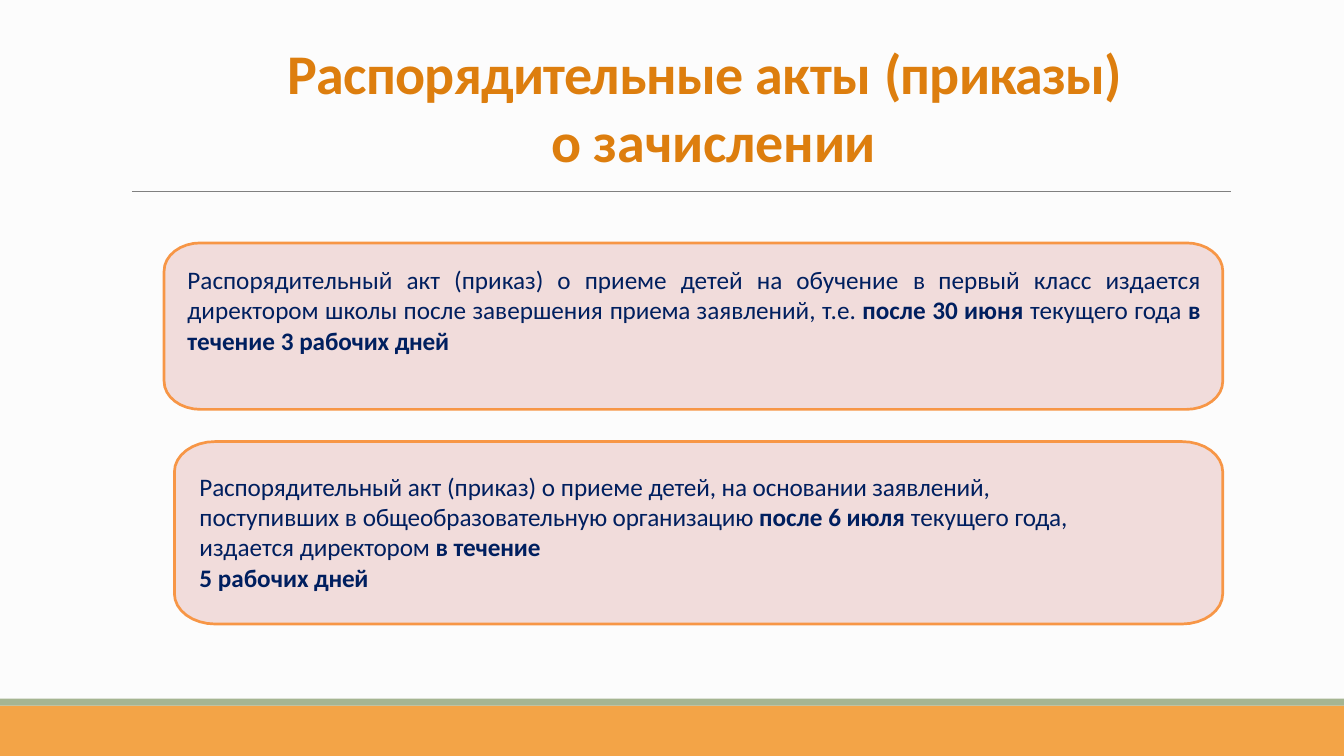
import math
import pptx
import pptx.util
import pptx.dml.color
import pptx.enum.shapes
import pptx.enum.text
import pptx.oxml

Pt = pptx.util.Pt
RGB = pptx.dml.color.RGBColor
Align = pptx.enum.text.PP_ALIGN
Anchor = pptx.enum.text.MSO_ANCHOR

PAPER = RGB(0xFC, 0xFC, 0xFC)
AMBER = RGB(0xF3, 0xA4, 0x47)
SAGE = RGB(0xA5, 0xB5, 0x92)
GRAY = RGB(0x80, 0x80, 0x80)
RUST = RGB(0xDD, 0x7E, 0x0E)
PINK = RGB(0xF1, 0xDC, 0xDB)
EDGE = RGB(0xF7, 0x96, 0x46)
NAVY = RGB(0x00, 0x1F, 0x5F)


class Board:
    """Holds the style and the current slide."""
    face = "Calibri"

    def __init__(self, slide):
        self.slide = slide
        slide.background.fill.solid()
        slide.background.fill.fore_color.rgb = PAPER

    def paint(self, shape, fill, edge=None, width=0):
        shape.shadow.inherit = False
        shape.fill.solid()
        shape.fill.fore_color.rgb = fill
        if edge is None:
            shape.line.fill.background()
        else:
            shape.line.color.rgb = edge
            shape.line.width = Pt(width)

    def band(self, left, top, width, height, fill):
        kind = pptx.enum.shapes.MSO_SHAPE.RECTANGLE
        shape = self.slide.shapes.add_shape(
            kind, Pt(left), Pt(top), Pt(width), Pt(height))
        self.paint(shape, fill)

    def rule(self, left, right, top):
        kind = pptx.enum.shapes.MSO_CONNECTOR.STRAIGHT
        line = self.slide.shapes.add_connector(
            kind, Pt(left), Pt(top), Pt(right), Pt(top))
        line.line.color.rgb = GRAY
        line.line.width = Pt(0.5)
        props = line.element.spPr
        props.append(pptx.oxml.parse_xml(
            '<a:effectLst xmlns:a='
            '"http://schemas.openxmlformats.org/drawingml/2006/main"/>'))

    def panel(self, left, top, right, low, rx, ry):
        """Box with elliptical corners, traced clockwise from the left."""
        hubs = [(left + rx, top + ry), (right - rx, top + ry),
                (right - rx, low - ry), (left + rx, low - ry)]
        dots = []
        for turn, (x, y) in enumerate(hubs):
            for step in range(9):
                arc = math.pi * (1 + turn / 2 + step / 16)
                dots.append((Pt(x + rx * math.cos(arc)),
                             Pt(y + ry * math.sin(arc))))
        form = self.slide.shapes.build_freeform(*dots[0], scale=1.0)
        form.add_line_segments(dots[1:], close=True)
        self.paint(form.convert_to_shape(), PINK, EDGE, 1.92)

    def text(self, left, top, width, height, paras, size, color, align,
             inset=1, before=(1,), indent=(0.7, 0), bold=False,
             anchor=Anchor.TOP):
        """Each run is (text, letter spacing, bold); "\\v" breaks a line."""
        box = self.slide.shapes.add_textbox(
            Pt(left), Pt(top), Pt(width), Pt(height))
        frame = box.text_frame
        frame.word_wrap = True
        frame.auto_size = pptx.enum.text.MSO_AUTO_SIZE.SHAPE_TO_FIT_TEXT
        frame.vertical_anchor = anchor
        frame.margin_left = frame.margin_right = frame.margin_bottom = 0
        frame.margin_top = Pt(inset)
        for num, (runs, gap) in enumerate(zip(paras, before)):
            para = frame.add_paragraph() if num else frame.paragraphs[0]
            para.alignment = align
            para.space_before = Pt(gap)
            props = para._p.get_or_add_pPr()
            props.set("marL", str(Pt(indent[0])))
            props.set("indent", str(Pt(indent[1])))
            font = para.font
            font.name, font.size, font.bold = self.face, Pt(size), bold
            font.color.rgb = color
            for words, track, heavy in runs:
                if words == "\v":
                    para.add_line_break()
                    continue
                run = para.add_run()
                run.text = words
                run.font.name, run.font.size = self.face, Pt(size)
                run.font.bold = heavy
                run.font.color.rgb = color
                run._r.get_or_add_rPr().set("spc", str(round(track * 100)))


def main():
    deck = pptx.Presentation()
    deck.slide_width, deck.slide_height = Pt(960), Pt(540)
    board = Board(deck.slides.add_slide(deck.slide_layouts[6]))

    # Footer bands and the rule under the title
    board.band(0, 504, 960, 36, AMBER)
    board.band(0, 499, 960, 5, SAGE)
    board.rule(94.3, 879.1, 136.6)

    # Title
    title = [("Распорядительные ", -0.5, True), ("акты ", -0.2, True),
             ("(приказы) ", -0.5, True), ("\v", 0, True),
             ("о ", -0.5, True), ("зачислении", -0.1, True)]
    board.text(86.4, 22.3, 792, 101.5, [title], 40, RUST, Align.CENTER,
               inset=5, before=(1.1,), indent=(55.4, -4.3), bold=True,
               anchor=Anchor.BOTTOM)

    # First grade orders
    board.panel(117.2, 173.5, 873.4, 292.4, 26, 20)
    first = [("Распорядительный акт (приказ) о приеме детей на обучение ",
              0, False),
             ("в ", -0.5, False),
             ("первый класс издается директором школы после завершения ",
              0, False),
             ("приема ", -0.1, False), ("заявлений, т.е. ", 0, False),
             ("после 30 июня ", 0, True), ("текущего года ", 0, False),
             ("в течение 3 ", 0, True), ("рабочих ", -0.1, True),
             ("дней", -0.2, True)]
    board.text(133.2, 187.9, 724.3, 66.2, [first], 18, NAVY, Align.JUSTIFY)

    # Orders on later applications
    board.panel(124.6, 315.4, 873.4, 445.7, 29, 21.6)
    later = [("Распорядительный ", -0.1, False),
             ("акт (приказ) о приеме", 0, False), (" детей, ", -0.1, False),
             ("на", 0, False), (" основании заявлений, ", -0.1, False),
             ("поступивших в ", 0, False),
             ("общеобразовательную организацию ", -0.1, False),
             ("после 6 июля ", 0, True), ("текущего ", 0, False),
             ("года, ", -0.1, False), ("издается ", 0, False),
             ("директором ", -0.1, False), ("в ", 0, True),
             ("течение", -0.1, True)]
    term = [("5 рабочих", 0, True), (" дней", -0.2, True)]
    board.text(141.8, 335.5, 660.2, 88.6, [later, term], 18, NAVY,
               Align.LEFT, before=(1, 0.1))

    deck.save("out.pptx")


if __name__ == "__main__":
    main()
